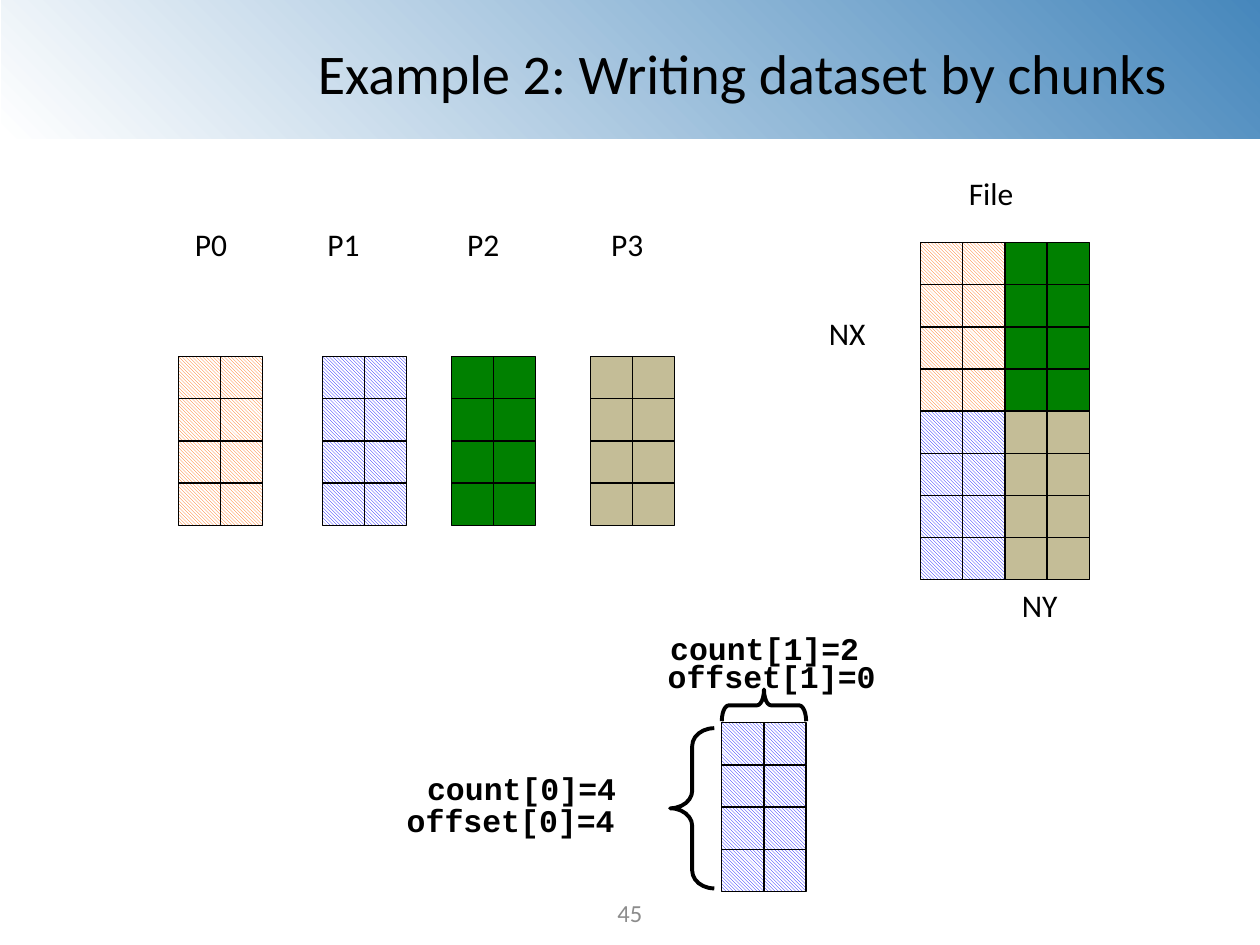
"""Build a slide showing how four processes write a dataset by chunks."""
import lxml.etree
import pptx
import pptx.dml.color
import pptx.enum.dml
import pptx.enum.shapes
import pptx.enum.text
import pptx.util

Cm = pptx.util.Cm
Pt = pptx.util.Pt
Rgb = pptx.dml.color.RGBColor.from_string
Preset = pptx.enum.shapes.MSO_SHAPE
Align = pptx.enum.text.PP_ALIGN
Anchor = pptx.enum.text.MSO_ANCHOR

COLORS = {
    "banner": "4687BC", "text": "000000", "number": "8C8C8C", "paper": "FFFFFF",
    "P0": "FF6600", "P1": "0000FF", "P2": "008000", "P3": "C4BD97",
}
HATCHED = {"P0", "P1"}
CELL = 0.85
CHUNK_COLUMNS, CHUNK_ROWS = 2, 4
CHUNK_WIDTH, CHUNK_HEIGHT = CELL * CHUNK_COLUMNS, CELL * CHUNK_ROWS
LABEL = {"name": "Calibri", "size": Pt(18), "bold": False}
CODE = {"name": "Courier New", "size": Pt(18), "bold": True}
TITLE = {"name": "Calibri", "size": Pt(32), "bold": False}
NUMBER = {"name": "Calibri", "size": Pt(14), "bold": False}


def write(shape, text, style, color="text", align=Align.LEFT, anchor=Anchor.TOP):
    """Put one line of formatted text in a shape."""
    frame = shape.text_frame
    frame.text = text
    settings = {"word_wrap": False, "vertical_anchor": anchor,
                "auto_size": pptx.enum.text.MSO_AUTO_SIZE.NONE}
    for name, value in settings.items():
        setattr(frame, name, value)
    paragraph = frame.paragraphs[0]
    paragraph.alignment = align
    font = paragraph.runs[0].font
    for name, value in style.items():
        setattr(font, name, value)
    font.color.rgb = Rgb(COLORS[color])


def add_label(shapes, text, left, top, width, height, style=LABEL, **options):
    """Add a text box with one line of text."""
    box = shapes.add_textbox(Cm(left), Cm(top), Cm(width), Cm(height))
    write(box, text, style, **options)


def add_banner(slide, left, top, width, height):
    """Add the shaded band with the slide title on it."""
    band = slide.shapes.add_shape(
        Preset.RECTANGLE, Cm(left), Cm(top), Cm(width), Cm(height))
    band.shadow.inherit = False
    band.line.fill.background()
    gradient = lxml.etree.fromstring(
        '<a:gradFill xmlns:a="http://schemas.openxmlformats.org/drawingml/2006/main">'
        f'<a:gsLst><a:gs pos="0"><a:srgbClr val="{COLORS["banner"]}"/></a:gs>'
        f'<a:gs pos="100000"><a:srgbClr val="{COLORS["paper"]}"/></a:gs></a:gsLst>'
        '<a:path path="circle"><a:fillToRect l="100000" b="100000"/></a:path>'
        '</a:gradFill>')
    band._element.spPr.find(pptx.oxml.ns.qn("a:prstGeom")).addnext(gradient)
    slide.shapes._spTree.insert(2, band._element)

    title = slide.shapes.title
    place = {"left": left + 6.05, "top": top + 0.64, "width": 17.78, "height": 1.63}
    for name, value in place.items():
        setattr(title, name, Cm(value))
    write(title, "Example 2: Writing dataset by chunks", TITLE,
          align=Align.CENTER, anchor=Anchor.MIDDLE)


def add_chunk(shapes, process, left, top):
    """Draw the grid of cells that one process writes."""
    for row in range(CHUNK_ROWS):
        for column in range(CHUNK_COLUMNS):
            cell = shapes.add_shape(
                Preset.RECTANGLE, Cm(left + column * CELL), Cm(top + row * CELL),
                Cm(CELL), Cm(CELL))
            cell.shadow.inherit = False
            cell.line.color.rgb = Rgb(COLORS["text"])
            cell.line.width = Pt(0.75)
            if process in HATCHED:
                cell.fill.patterned()
                cell.fill.pattern = pptx.enum.dml.MSO_PATTERN.DARK_DOWNWARD_DIAGONAL
                cell.fill.fore_color.rgb = Rgb(COLORS[process])
                cell.fill.back_color.rgb = Rgb(COLORS["paper"])
            else:
                cell.fill.solid()
                cell.fill.fore_color.rgb = Rgb(COLORS[process])


def add_processes(slide, left, top):
    """Draw the chunk of each process under its name."""
    columns = {"P0": (0.08, 0), "P1": (2.75, 2.9), "P2": (5.57, 5.5), "P3": (8.47, 8.3)}
    for process, (label_left, chunk_left) in columns.items():
        add_label(slide.shapes, process, left + label_left, top, 1.55, 1.27)
        add_chunk(slide.shapes, process, left + chunk_left, top + 2.77)


def add_file(slide, left, top):
    """Draw the file as two by two chunks with its dimensions."""
    quarters = [("P0", 0, 0), ("P1", 0, 1), ("P2", 1, 0), ("P3", 1, 1)]
    for process, column, row in quarters:
        add_chunk(slide.shapes, process,
                  left + column * CHUNK_WIDTH, top + row * CHUNK_HEIGHT)
    add_label(slide.shapes, "File", left + 0.72, top - 1.5, 1.88, 1.27)
    add_label(slide.shapes, "NX", left - 2.1, top + 1.31, 1.78, 1.3)
    add_label(slide.shapes, "NY", left + 1.79, top + 6.8, 1.75, 1.3)


def add_brace(shapes, left, top, width, height, bend, rotation=0):
    """Add a thick brace outline."""
    brace = shapes.add_shape(
        Preset.LEFT_BRACE, Cm(left), Cm(top), Cm(width), Cm(height))
    brace.shadow.inherit = False
    brace.adjustments[0] = bend
    brace.rotation = rotation
    brace.fill.background()
    brace.line.color.rgb = Rgb(COLORS["text"])
    brace.line.width = Pt(2.25)


def add_selection(slide, left, top):
    """Draw the chunk of P1 with its counts and offsets."""
    shapes = slide.shapes.add_group_shape().shapes
    add_chunk(shapes, "P1", left + 6.6, top + 2.02)
    add_brace(shapes, left + 7.13, top + 0.82, 0.64, CHUNK_WIDTH, 0.22, rotation=90)
    add_brace(shapes, left + 5.56, top + 2.13, 0.89, 3.23, 0.4)
    labels = [("count[0]=4", 0.41, 2.82), ("count[1]=2", 5.31, 0),
              ("offset[0]=4", 0, 3.48), ("offset[1]=0", 5.26, 0.58)]
    for text, across, down in labels:
        add_label(shapes, text, left + across, top + down, 4.8, 1.02, CODE)


def main():
    """Build and save the slide."""
    presentation = pptx.Presentation()
    presentation.slide_width = Cm(25.4)
    presentation.slide_height = Cm(19.05)
    slide = presentation.slides.add_slide(presentation.slide_layouts[5])
    add_banner(slide, 0.03, 0, 25.4, 2.79)
    add_processes(slide, 3.6, 4.42)
    add_file(slide, 18.56, 4.89)
    add_selection(slide, 7.95, 12.55)
    add_label(slide.shapes, "45", 9.74, 17.98, 5.92, 0.85, NUMBER,
              color="number", align=Align.CENTER, anchor=Anchor.MIDDLE)
    presentation.save("out.pptx")


if __name__ == "__main__":
    main()
